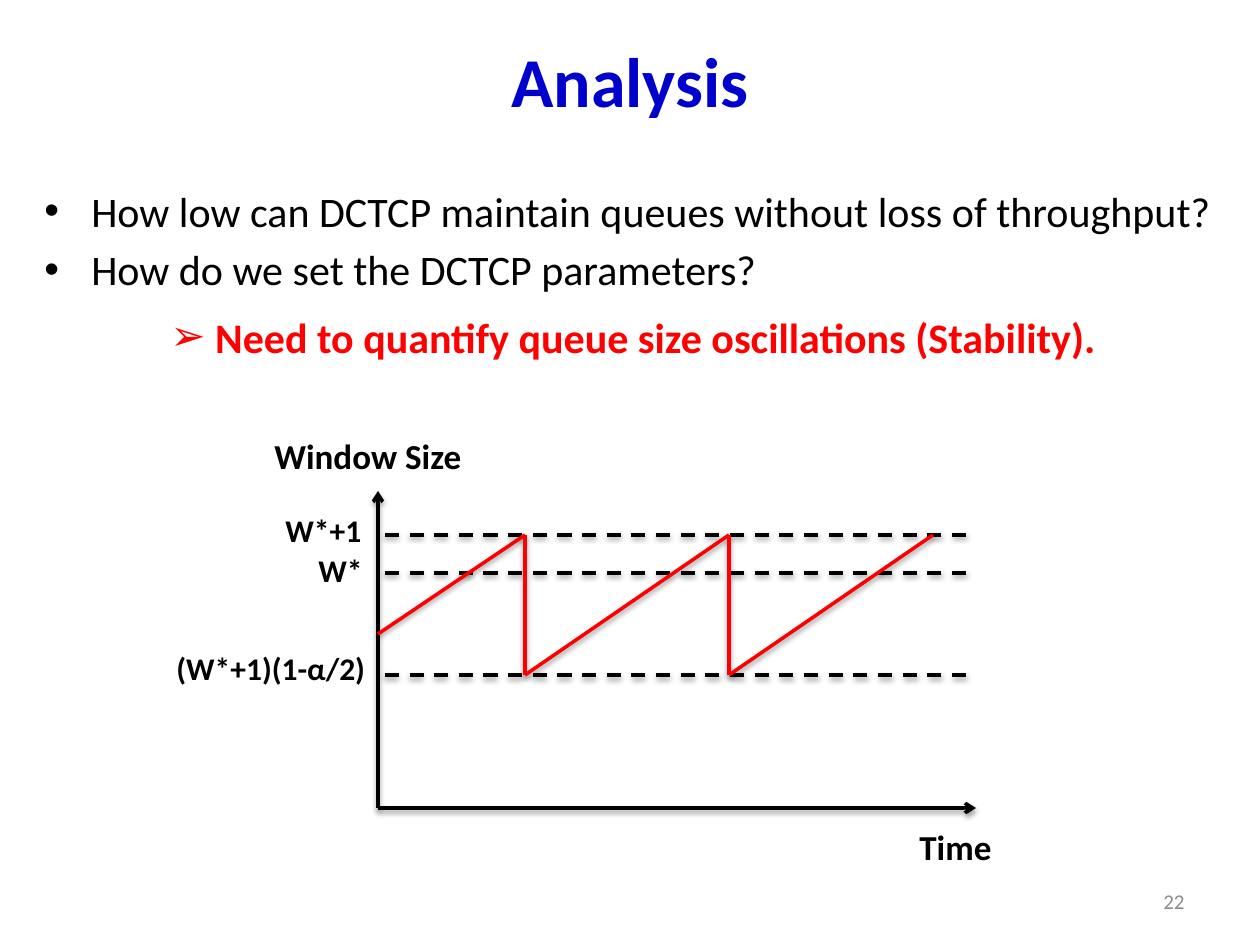
import pptx
import pptx.util
import pptx.dml.color
import pptx.enum.dml
import pptx.enum.shapes
import pptx.enum.text
import pptx.oxml
import pptx.oxml.ns

PX = 914400 / 126
FONT = "Calibri"
COLORS = {"title": "0000CC", "text": "000000", "accent": "FF0000", "number": "8C8C8C"}
ALIGN = pptx.enum.text.PP_ALIGN
ANCHOR = pptx.enum.text.MSO_ANCHOR
NAMESPACE = pptx.oxml.ns.nsdecls("a")


def emu(px):
    return pptx.util.Emu(round(px * PX))


def rgb(name):
    return pptx.dml.color.RGBColor.from_string(COLORS[name])


def add_span(para, text, size, color, bold=False):
    span = para.add_run()
    span.text = text
    span.font.name = FONT
    span.font.size = pptx.util.Pt(size)
    span.font.bold = bold
    span.font.color.rgb = rgb(color)


def add_box(shapes, left, top, width, height):
    box = shapes.add_textbox(emu(left), emu(top), emu(width), emu(height))
    box.text_frame.word_wrap = True
    return box


def add_label(shapes, text, left, top, width, height, size):
    box = add_box(shapes, left, top, width, height)
    box.text_frame.auto_size = pptx.enum.text.MSO_AUTO_SIZE.SHAPE_TO_FIT_TEXT
    add_span(box.text_frame.paragraphs[0], text, size, "text", bold=True)


def set_bullet(para, char, indent=0):
    props = para._p.get_or_add_pPr()
    props.set("marL", str(emu(indent)))
    props.set("indent", str(-emu(indent)))
    props.append(pptx.oxml.parse_xml(f'<a:buFont {NAMESPACE} typeface="Arial"/>'))
    props.append(pptx.oxml.parse_xml(f'<a:buChar {NAMESPACE} char="{char}"/>'))


def add_line(shapes, start, end, color, dashed=False, arrow=False):
    line = shapes.add_connector(
        pptx.enum.shapes.MSO_CONNECTOR.STRAIGHT, *map(emu, (*start, *end)))
    line.line.color.rgb = rgb(color)
    line.line.width = pptx.util.Pt(2)
    if dashed:
        line.line.dash_style = pptx.enum.dml.MSO_LINE.DASH
    props = line._element.spPr
    if arrow:
        props.find(pptx.oxml.ns.qn("a:ln")).append(
            pptx.oxml.parse_xml(f'<a:tailEnd {NAMESPACE} type="arrow"/>'))
    # Soft shadow straight below the line
    props.append(pptx.oxml.parse_xml(
        f'<a:effectLst {NAMESPACE}>'
        '<a:outerShdw blurRad="40000" dist="20000" dir="5400000" rotWithShape="0">'
        '<a:srgbClr val="000000"><a:alpha val="38000"/></a:srgbClr>'
        '</a:outerShdw></a:effectLst>'))


def add_title(page, left, top, width, height):
    title = page.shapes.title
    title.left, title.top = emu(left), emu(top)
    title.width, title.height = emu(width), emu(height)
    title.text_frame.vertical_anchor = ANCHOR.MIDDLE
    para = title.text_frame.paragraphs[0]
    para.alignment = ALIGN.CENTER
    add_span(para, "Analysis", 40, "title", bold=True)


def add_questions(page, left, top, width, height):
    # Two questions, then the conclusion drawn from them
    frame = add_box(page.shapes, left, top, width, height).text_frame
    questions = ("How low can DCTCP maintain queues without loss of throughput?",
                 "How do we set the DCTCP parameters?")
    for index, question in enumerate(questions):
        para = frame.add_paragraph() if index else frame.paragraphs[0]
        para.space_before = pptx.util.Pt(4.8)
        set_bullet(para, "•", indent=47)
        add_span(para, question, 24, "text")

    box = add_box(page.shapes, left + 126, top + 126, 966, 63)
    box.text_frame.auto_size = pptx.enum.text.MSO_AUTO_SIZE.SHAPE_TO_FIT_TEXT
    para = box.text_frame.paragraphs[0]
    set_bullet(para, "➢")
    add_span(para, " Need to quantify queue size oscillations (Stability).",
             24, "accent", bold=True)


def add_sawtooth(page, left, top, width, height):
    shapes = page.shapes.add_group_shape().shapes
    axis_x, axis_y = left + 214, top + height - 67
    peak, middle, trough = top + 107, top + 145, top + 247

    # Axes
    add_line(shapes, (axis_x, axis_y), (axis_x, top + 63), "text", arrow=True)
    add_line(shapes, (axis_x, axis_y), (axis_x + 598, axis_y), "text", arrow=True)

    # Window levels
    for level in (peak, middle, trough):
        add_line(shapes, (axis_x + 588, level), (axis_x, level), "text", dashed=True)

    # Sawtooth: climb to the peak, drop to the trough
    first_drop, period = axis_x + 147, 204
    second_drop = first_drop + period
    corners = [(axis_x, top + 206), (first_drop, peak), (first_drop, trough),
               (second_drop, peak), (second_drop, trough),
               (second_drop + period, peak)]
    for start, end in zip(corners, corners[1:]):
        add_line(shapes, start, end, "accent")

    # Labels
    add_label(shapes, "Window Size", left + 98, top, 255, 55, 20)
    add_label(shapes, "Time", left + width - 206, axis_y + 11, 206, 55, 20)
    add_label(shapes, "W*+1", left + 109, peak - 30, 234, 50, 18)
    add_label(shapes, "W*", left + 142, middle - 28, 103, 50, 18)
    add_label(shapes, "(W*+1)(1-α/2)", left, trough - 32, 234, 50, 18)


def add_page_number(page, left, top, width, height):
    frame = add_box(page.shapes, left, top, width, height).text_frame
    frame.vertical_anchor = ANCHOR.MIDDLE
    frame.paragraphs[0].alignment = ALIGN.RIGHT
    add_span(frame.paragraphs[0], "22", 12, "number")


def main():
    deck = pptx.Presentation()
    deck.slide_width, deck.slide_height = emu(1260), emu(945)
    page = deck.slides.add_slide(deck.slide_layouts.get_by_name("Title Only"))
    add_title(page, 63, 0, 1134, 158)
    add_questions(page, 32, 179, 1197, 210)
    add_sawtooth(page, 164, 428, 949, 447)
    add_page_number(page, 903, 876, 294, 50)
    deck.save("out.pptx")


if __name__ == "__main__":
    main()
